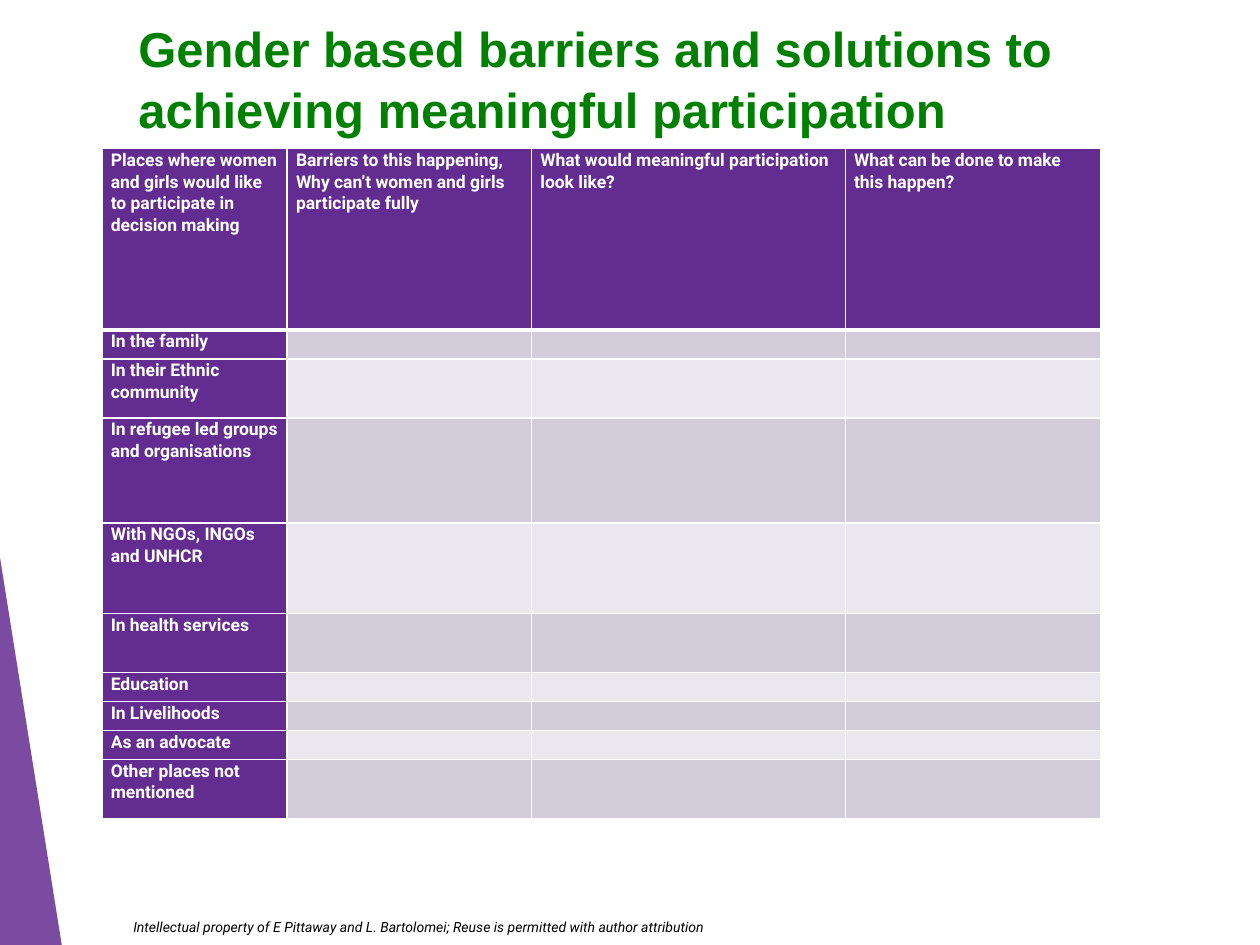
from lxml.etree import SubElement
from pptx import Presentation
from pptx.dml.color import RGBColor
from pptx.enum.text import MSO_ANCHOR
from pptx.oxml import parse_xml
from pptx.oxml.ns import nsdecls, qn
from pptx.util import Inches, Pt

PURPLE = RGBColor(0x63, 0x2C, 0x90)
GREEN = RGBColor(0x00, 0x80, 0x00)
BLACK = RGBColor(0x00, 0x00, 0x00)
WHITE = RGBColor(0xFF, 0xFF, 0xFF)
BANDS = RGBColor(0xD3, 0xCD, 0xDB), RGBColor(0xEA, 0xE8, 0xEE)

SLIDE_WIDTH, SLIDE_HEIGHT = 10, 7.5
COLUMN_WIDTHS = 1.47, 1.94, 2.49, 2.03
HEADER_HEIGHT = 1.44
HEADINGS = (
    "Places where women and girls would like to participate in decision making",
    "Barriers to this happening, Why can’t women and girls participate fully",
    "What would meaningful participation look like?",
    "What can be done to make this happen?",
)
PLACES = (
    ("In the family", 0.23),
    ("In their Ethnic community", 0.47),
    ("In refugee led groups and organisations", 0.83),
    ("With NGOs, INGOs and UNHCR", 0.72),
    ("In health services", 0.47),
    ("Education", 0.23),
    ("In Livelihoods", 0.23),
    ("As an advocate", 0.23),
    ("Other places not mentioned", 0.47),
)


def style_font(paragraph, name, size, color, bold=False, italic=False):
    font = paragraph.font
    font.name, font.size = name, Pt(size)
    font.bold, font.italic = bold, italic
    font.color.rgb = color


def add_text(slide, text, left, top, width, height, inset_top=0.05):
    frame = slide.shapes.add_textbox(
        Inches(left), Inches(top), Inches(width), Inches(height)
    ).text_frame
    frame.word_wrap = True
    frame.vertical_anchor = MSO_ANCHOR.TOP
    frame.margin_top = Inches(inset_top)
    paragraph = frame.paragraphs[0]
    paragraph.text = text
    return paragraph


def add_corner_wedge(slide):
    top, width = 0.59 * SLIDE_HEIGHT, 0.049 * SLIDE_WIDTH
    outline = slide.shapes.build_freeform(0, Inches(top), scale=1.0)
    outline.add_line_segments(
        [(Inches(width), Inches(SLIDE_HEIGHT)), (0, Inches(SLIDE_HEIGHT))], close=True
    )
    wedge = outline.convert_to_shape()
    wedge.shadow.inherit = False
    wedge.line.fill.background()
    wedge.fill.solid()
    wedge.fill.fore_color.rgb = PURPLE
    tint = wedge.fill._xPr.find(qn("a:solidFill"))[0]
    SubElement(tint, qn("a:alpha"), val="85000")


def set_borders(cell, top, bottom):
    properties = cell._tc.get_or_add_tcPr()
    weights = (("L", 1), ("R", 1), ("T", top), ("B", bottom))
    for position, (side, weight) in enumerate(weights):
        border = parse_xml(
            f'<a:ln{side} {nsdecls("a")} w="{Pt(weight)}"><a:solidFill>'
            f'<a:srgbClr val="{WHITE}"/></a:solidFill></a:ln{side}>'
        )
        properties.insert(position, border)


def fill_cell(cell, text, color, top=1, bottom=1):
    cell.margin_left = cell.margin_right = Inches(0.07)
    cell.margin_top = cell.margin_bottom = 0
    cell.fill.solid()
    cell.fill.fore_color.rgb = color
    set_borders(cell, top, bottom)
    paragraph = cell.text_frame.paragraphs[0]
    if text:
        paragraph.text = text
        paragraph.line_spacing = 1.07
        paragraph.space_after = Pt(8)
        style_font(paragraph, "Roboto", 10, WHITE, bold=True)
    else:
        SubElement(paragraph._p, qn("a:endParaRPr"), sz="1000")


def add_participation_table(slide):
    heights = [HEADER_HEIGHT] + [height for _, height in PLACES]
    table = slide.shapes.add_table(
        len(heights), len(COLUMN_WIDTHS), Inches(0.81), Inches(1.18),
        Inches(sum(COLUMN_WIDTHS)), Inches(sum(heights)),
    ).table
    for column, width in zip(table.columns, COLUMN_WIDTHS):
        column.width = Inches(width)
    for row, height in zip(table.rows, heights):
        row.height = Inches(height)
    for column, heading in enumerate(HEADINGS):
        fill_cell(table.cell(0, column), heading, PURPLE, bottom=3)
    for row, (place, _) in enumerate(PLACES, start=1):
        top = 3 if row == 1 else 1
        fill_cell(table.cell(row, 0), place, PURPLE, top)
        for column in range(1, len(COLUMN_WIDTHS)):
            fill_cell(table.cell(row, column), "", BANDS[(row - 1) % 2], top)


def main():
    deck = Presentation()
    deck.slide_width, deck.slide_height = Inches(SLIDE_WIDTH), Inches(SLIDE_HEIGHT)
    slide = deck.slides.add_slide(deck.slide_layouts[6])
    add_corner_wedge(slide)
    credit = add_text(
        slide,
        "Intellectual property of E Pittaway and L. Bartolomei; "
        "Reuse is permitted with author attribution",
        0.96, 7.24, 5.8, 0.23,
    )
    style_font(credit, "Roboto", 8, BLACK, italic=True)
    add_participation_table(slide)
    title = add_text(
        slide,
        "Gender based barriers and solutions to achieving meaningful participation",
        1, 0.05, 8.04, 1.35, inset_top=0.07,
    )
    title.line_spacing = 1.05
    style_font(title, "Arial", 28, GREEN, bold=True)
    deck.save("out.pptx")


if __name__ == "__main__":
    main()
